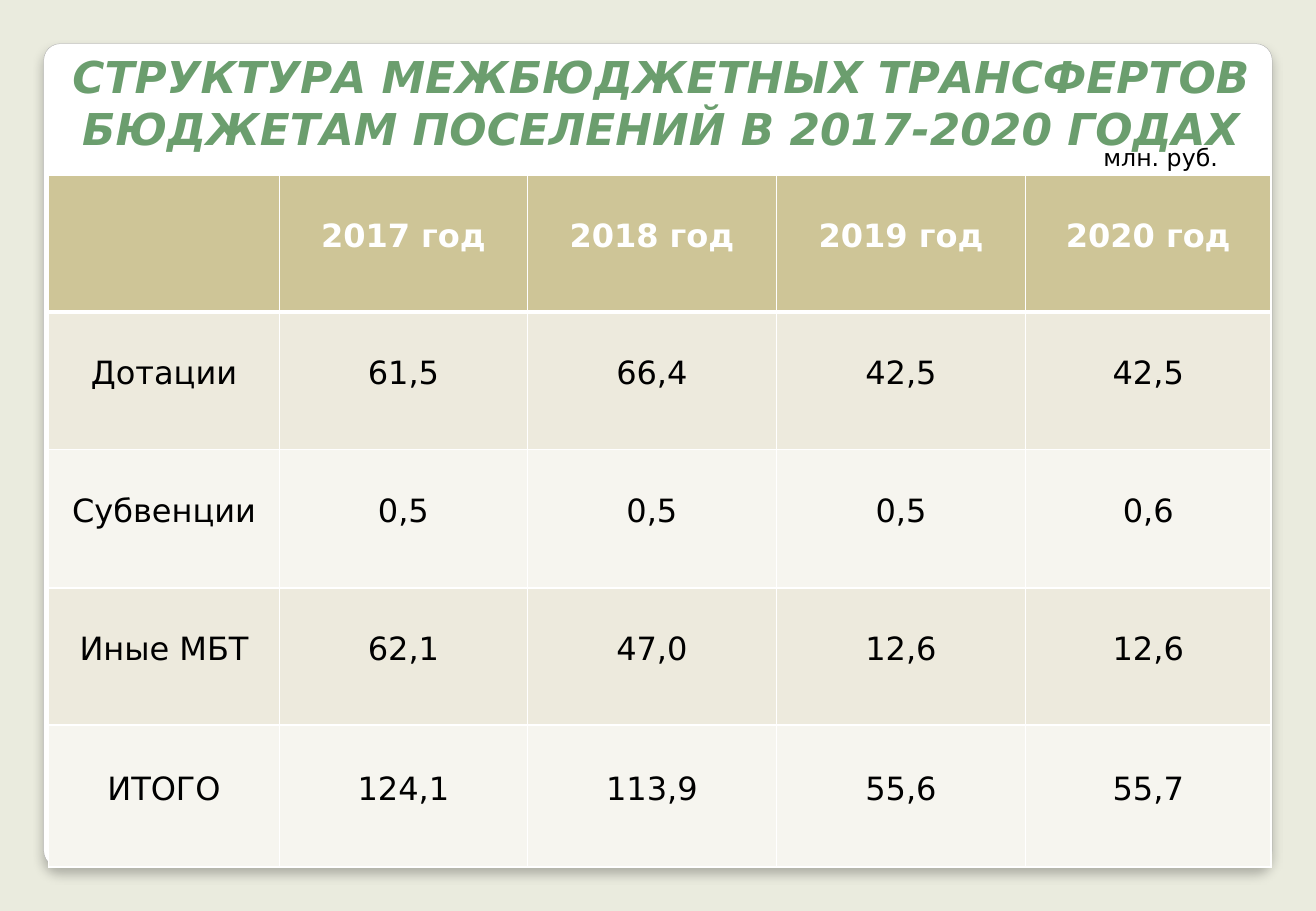
from lxml import etree
from pptx import Presentation
from pptx.dml.color import RGBColor
from pptx.enum.shapes import MSO_SHAPE
from pptx.enum.text import MSO_ANCHOR, MSO_AUTO_SIZE, PP_ALIGN
from pptx.oxml.ns import qn
from pptx.util import Emu, Pt

ROUNDED = MSO_SHAPE.ROUNDED_RECTANGLE
MIDDLE, TOP = MSO_ANCHOR.MIDDLE, MSO_ANCHOR.TOP
CENTER, LEFT = PP_ALIGN.CENTER, PP_ALIGN.LEFT
GROW, FIXED = MSO_AUTO_SIZE.SHAPE_TO_FIT_TEXT, MSO_AUTO_SIZE.NONE

EMU_PER_PX = 9144  # 100 px to the inch
FONT = "DejaVu Sans"
TITLE_ONLY_LAYOUT = 5

BACKGROUND = RGBColor(0xEA, 0xEB, 0xDE)
WHITE = RGBColor(0xFF, 0xFF, 0xFF)
BLACK = RGBColor(0x00, 0x00, 0x00)
CARD_EDGE = RGBColor(0xA4, 0xA4, 0xA4)
TITLE_GREEN = RGBColor(0x6B, 0x9E, 0x6E)
HEADER_FILL = RGBColor(0xCE, 0xC5, 0x97)
BAND_FILLS = (RGBColor(0xED, 0xEA, 0xDD), RGBColor(0xF6, 0xF5, 0xEF))

TITLE = "СТРУКТУРА МЕЖБЮДЖЕТНЫХ ТРАНСФЕРТОВ БЮДЖЕТАМ ПОСЕЛЕНИЙ В 2017-2020 ГОДАХ"
UNIT = "млн. руб."
TRANSFERS = (
    ("", "2017 год", "2018 год", "2019 год", "2020 год"),
    ("Дотации", "61,5", "66,4", "42,5", "42,5"),
    ("Субвенции", "0,5", "0,5", "0,5", "0,6"),
    ("Иные МБТ", "62,1", "47,0", "12,6", "12,6"),
    ("ИТОГО", "124,1", "113,9", "55,6", "55,7"),
)
COLUMN_WIDTHS = (190, 204, 205, 205, 202)
ROW_HEIGHTS = (113, 113, 114, 113, 117)


def px(length):
    return Emu(length * EMU_PER_PX)


def scaled(box):
    return [px(length) for length in box]


def set_margins(target, left, top, right, bottom):
    target.margin_left, target.margin_top = px(left), px(top)
    target.margin_right, target.margin_bottom = px(right), px(bottom)


def write_text(frame, text, size, color, bold=False, italic=False, align=CENTER):
    paragraph = frame.paragraphs[0]
    paragraph.alignment = align
    run = paragraph.add_run()
    run.text = text
    font = run.font
    font.name, font.size = FONT, Pt(size)
    font.bold, font.italic = bold, italic
    font.color.rgb = color


def add_shadow(shape, blur, distance, alpha):
    shape.shadow.inherit = False
    effects = shape.element.spPr.find(qn("a:effectLst"))
    shadow = etree.SubElement(
        effects, qn("a:outerShdw"), blurRad=str(Pt(blur)), dist=str(Pt(distance)),
        dir="5400000", algn="t", rotWithShape="0")
    color = etree.SubElement(shadow, qn("a:srgbClr"), val=str(BLACK))
    etree.SubElement(color, qn("a:alpha"), val=str(alpha * 1000))


def set_borders(cell, bottom_width):
    properties = cell._tc.get_or_add_tcPr()
    widths = {"a:lnL": 1, "a:lnR": 1, "a:lnT": 1, "a:lnB": bottom_width}
    for position, (side, width) in enumerate(widths.items()):
        line = etree.Element(qn(side), w=str(Pt(width)))
        fill = etree.SubElement(line, qn("a:solidFill"))
        etree.SubElement(fill, qn("a:srgbClr"), val=str(WHITE))
        properties.insert(position, line)


def add_card(slide, box):
    card = slide.shapes.add_shape(ROUNDED, *scaled(box))
    card.adjustments[0] = 0.02
    card.fill.solid()
    card.fill.fore_color.rgb = WHITE
    card.line.color.rgb = CARD_EDGE
    card.line.width = Pt(0.16)
    add_shadow(card, blur=6, distance=4, alpha=25)
    # The card lies behind the title
    slide.shapes.title.element.addprevious(card.element)


def add_title(slide, box):
    title = slide.shapes.title
    title.left, title.top, title.width, title.height = scaled(box)
    frame = title.text_frame
    frame.word_wrap = True
    frame.auto_size = FIXED
    frame.vertical_anchor = MIDDLE
    set_margins(frame, 0, 0, 0, 0)
    write_text(frame, TITLE, 26, TITLE_GREEN, bold=True, italic=True)


def add_unit(slide, box):
    frame = slide.shapes.add_textbox(*scaled(box)).text_frame
    frame.word_wrap = False
    frame.auto_size = GROW
    frame.vertical_anchor = TOP
    set_margins(frame, 11, 5, 11, 5)
    write_text(frame, UNIT, 14, BLACK, align=LEFT)


def add_transfer_table(slide, box):
    table = slide.shapes.add_table(
        len(TRANSFERS), len(COLUMN_WIDTHS), *scaled(box)).table
    table.horz_banding = False
    for column, width in zip(table.columns, COLUMN_WIDTHS):
        column.width = px(width)
    for row, height in zip(table.rows, ROW_HEIGHTS):
        row.height = px(height)

    for row_index, values in enumerate(TRANSFERS):
        header = row_index == 0
        fill = HEADER_FILL if header else BAND_FILLS[(row_index - 1) % 2]
        for column_index, value in enumerate(values):
            cell = table.cell(row_index, column_index)
            cell.fill.solid()
            cell.fill.fore_color.rgb = fill
            set_borders(cell, bottom_width=3 if header else 1)
            cell.vertical_anchor = MIDDLE
            # A deeper bottom margin lifts the text above the middle
            set_margins(cell, 11, 5, 11, 17)
            if value:
                write_text(cell.text_frame, value, 19,
                           WHITE if header else BLACK, bold=header)


def build_slide(presentation):
    slide = presentation.slides.add_slide(
        presentation.slide_layouts[TITLE_ONLY_LAYOUT])
    slide.background.fill.solid()
    slide.background.fill.fore_color.rgb = BACKGROUND
    add_card(slide, (36, 36, 1011, 678))
    add_title(slide, (40, 41, 1009, 86))
    add_transfer_table(slide, (40, 144, sum(COLUMN_WIDTHS), sum(ROW_HEIGHTS)))
    add_unit(slide, (897, 113, 117, 34))


def main():
    presentation = Presentation()
    presentation.slide_width, presentation.slide_height = px(1083), px(750)
    build_slide(presentation)
    presentation.save("out.pptx")


if __name__ == "__main__":
    main()
